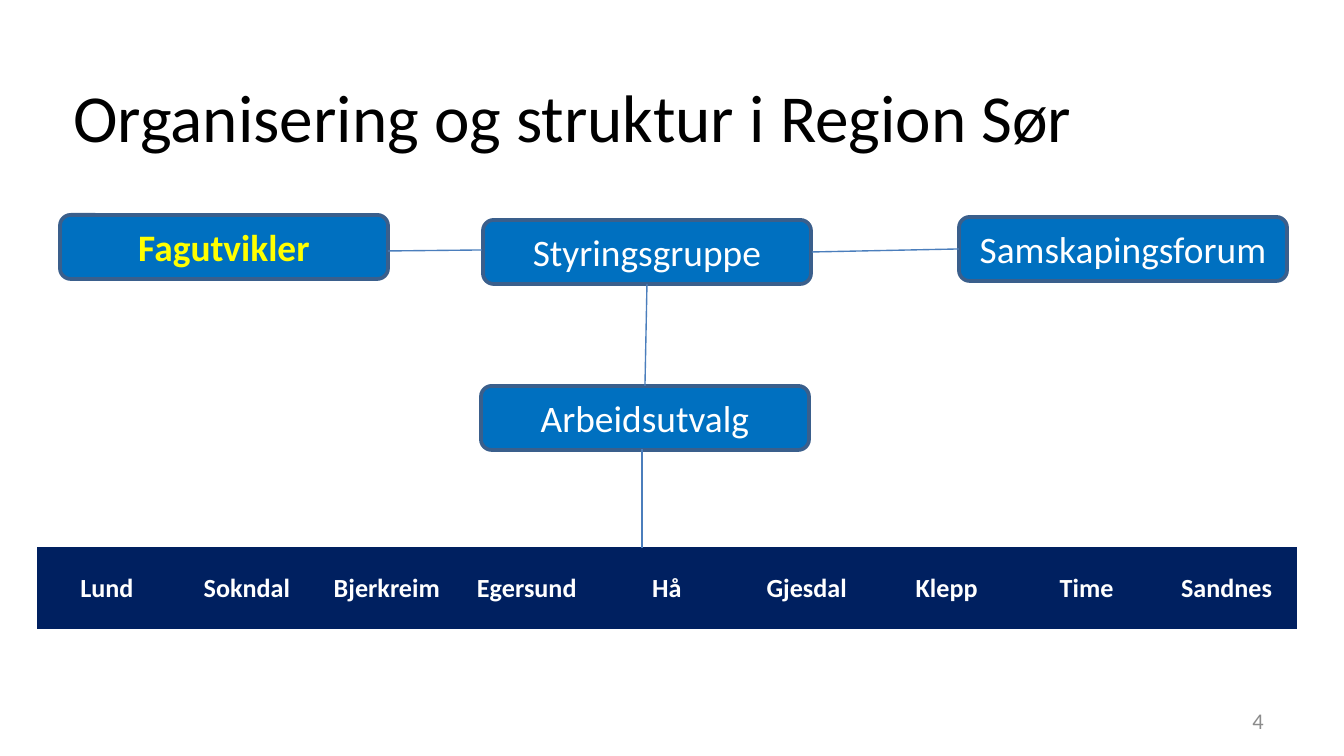
from lxml import etree
from pptx import Presentation
from pptx.dml.color import RGBColor
from pptx.enum.shapes import MSO_CONNECTOR, MSO_SHAPE
from pptx.enum.text import MSO_ANCHOR, PP_ALIGN
from pptx.oxml import parse_xml
from pptx.oxml.ns import qn
from pptx.util import Pt

ROUNDED = MSO_SHAPE.ROUNDED_RECTANGLE
STRAIGHT = MSO_CONNECTOR.STRAIGHT
MIDDLE = MSO_ANCHOR.MIDDLE
LEFT, CENTER, RIGHT = PP_ALIGN.LEFT, PP_ALIGN.CENTER, PP_ALIGN.RIGHT

BLACK = RGBColor(0x00, 0x00, 0x00)
WHITE = RGBColor(0xFF, 0xFF, 0xFF)
YELLOW = RGBColor(0xFF, 0xFF, 0x00)
GRAY = RGBColor(0x8C, 0x8C, 0x8C)
BLUE = RGBColor(0x00, 0x70, 0xC0)
NAVY = RGBColor(0x00, 0x20, 0x60)
OUTLINE = RGBColor(0x3A, 0x5F, 0x8C)
LINE_BLUE = RGBColor(0x4B, 0x7E, 0xBC)

PX_PER_INCH = 134.4
FONT = "Calibri"
NO_TABLE_STYLE = "{2D5ABB26-0587-4C30-8999-92F81FD0307C}"
BOTTOM_BORDER = (
    '<a:lnB xmlns:a="http://schemas.openxmlformats.org/drawingml/2006/main" w="25400">'
    '<a:solidFill><a:srgbClr val="FFFFFF"/></a:solidFill></a:lnB>'
)


def px(*lengths):
    return [round(length * 914400 / PX_PER_INCH) for length in lengths]


def write(text_frame, text, size, color, alignment, bold=False):
    text_frame.word_wrap = True
    paragraph = text_frame.paragraphs[0]
    paragraph.alignment = alignment
    run = paragraph.add_run()
    run.text = text
    run.font.name = FONT
    run.font.size = Pt(size)
    run.font.bold = bold
    run.font.color.rgb = color


presentation = Presentation()
presentation.slide_width, presentation.slide_height = px(1344, 756)
slide = presentation.slides.add_slide(presentation.slide_layouts[5])

title = slide.shapes.title
title.left, title.top, title.width, title.height = px(60, 53, 1210, 126)
title.text_frame.vertical_anchor = MIDDLE
write(title.text_frame, "Organisering og struktur i Region Sør", 36, BLACK, LEFT)

page_number = slide.shapes.add_textbox(*px(963, 701, 314, 40))
page_number.text_frame.vertical_anchor = MIDDLE
write(page_number.text_frame, "4", 12, GRAY, RIGHT)

municipalities = ["Lund", "Sokndal", "Bjerkreim", "Egersund", "Hå",
                  "Gjesdal", "Klepp", "Time", "Sandnes"]
table_frame = slide.shapes.add_table(1, len(municipalities), *px(37, 547, 1260, 84))
table = table_frame.table
table.first_row = False
table.horz_banding = False
table._tbl.tblPr.find(qn("a:tableStyleId")).text = NO_TABLE_STYLE
for column, municipality in enumerate(municipalities):
    table.columns[column].width = px(140)[0]
    cell = table.cell(0, column)
    cell.fill.solid()
    cell.fill.fore_color.rgb = NAVY
    cell.vertical_anchor = MIDDLE
    cell._tc.tcPr.insert(0, parse_xml(BOTTOM_BORDER))
    write(cell.text_frame, municipality, 14, WHITE, CENTER, bold=True)

groups = [
    ("Arbeidsutvalg", 481, 386, WHITE, False),
    ("Fagutvikler", 60, 215, YELLOW, True),
    ("Styringsgruppe", 483, 220, WHITE, False),
    ("Samskapingsforum", 959, 217, WHITE, False),
]
for name, left, top, color, bold in groups:
    box = slide.shapes.add_shape(ROUNDED, *px(left, top, 328, 64))
    box.shadow.inherit = False
    box.fill.solid()
    box.fill.fore_color.rgb = BLUE
    box.line.color.rgb = OUTLINE
    box.line.width = Pt(2)
    box.text_frame.vertical_anchor = MIDDLE
    write(box.text_frame, name, 20, color, CENTER, bold)

links = [
    (647, 284, 645, 386),
    (642, 449, 642, 548),
    (959, 249, 812, 252),
    (482, 250, 388, 251),
]
for ends in links:
    link = slide.shapes.add_connector(STRAIGHT, *px(*ends))
    link.line.color.rgb = LINE_BLUE
    link.line.width = Pt(0.75)
    etree.SubElement(link._element.spPr, qn("a:effectLst"))

presentation.save("out.pptx")
